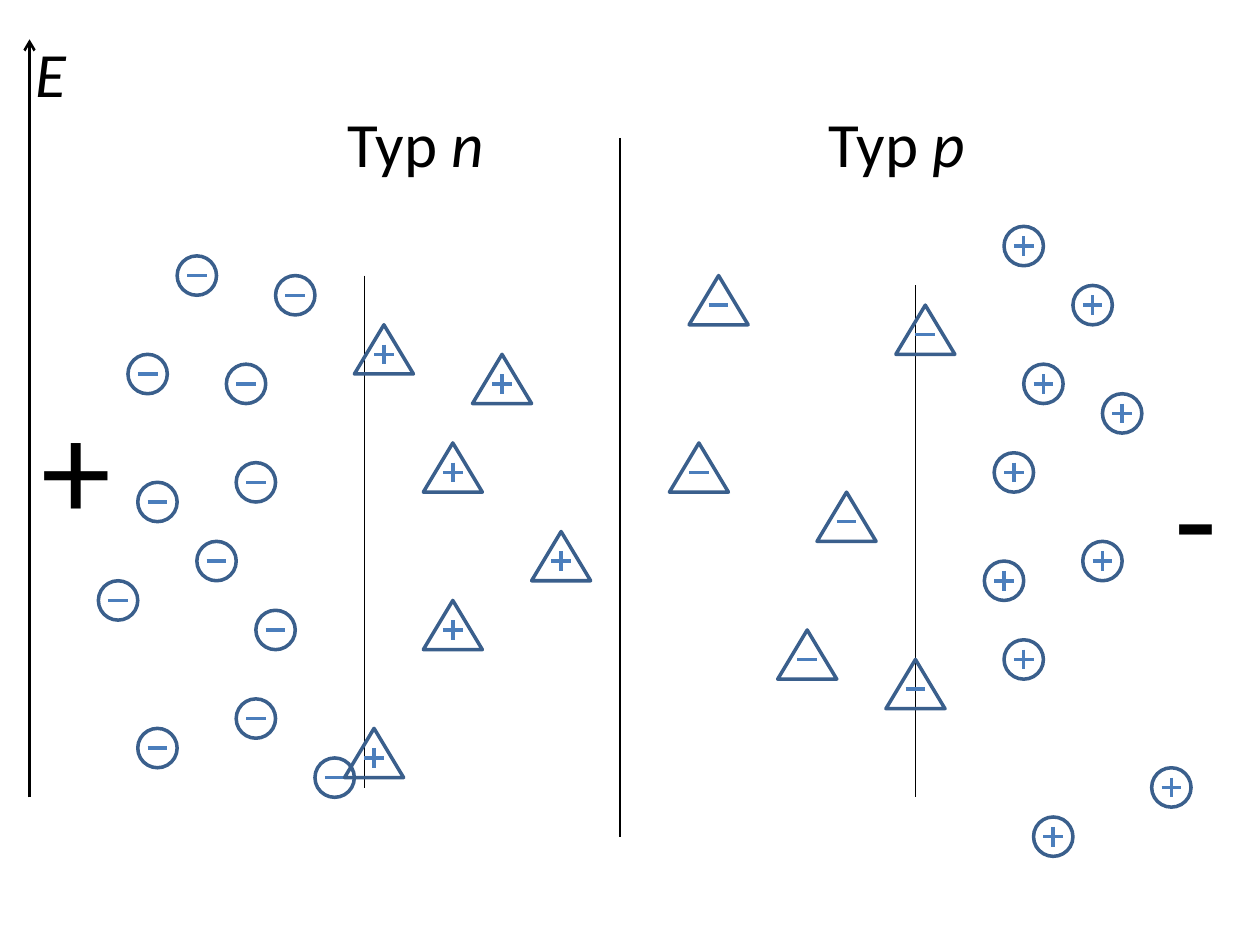
from dataclasses import dataclass

from lxml.etree import SubElement
from pptx import Presentation
from pptx.dml.color import RGBColor
from pptx.enum.shapes import MSO_CONNECTOR, MSO_SHAPE
from pptx.enum.text import MSO_AUTO_SIZE
from pptx.oxml.ns import qn
from pptx.util import Cm, Pt


@dataclass(frozen=True)
class Theme:
    font: str = "Calibri"
    black: RGBColor = RGBColor(0x00, 0x00, 0x00)
    outline: RGBColor = RGBColor(0x3A, 0x5F, 0x8C)
    sign: RGBColor = RGBColor(0x4B, 0x7E, 0xBC)
    label: int = 36
    pole: int = 80


T = Theme()
WIDTH, HEIGHT = 25.4, 19.05
UNIT = WIDTH / 128  # the drawing sits on a grid 128 units wide

prs = Presentation()
prs.slide_width, prs.slide_height = Cm(WIDTH), Cm(HEIGHT)
s = prs.slides.add_slide(prs.slide_layouts[6])


def grid(*units):
    """Turn grid units into lengths."""
    return [Cm(u * UNIT) for u in units]


def add_line(shapes, ends, color, width):
    """Draw a shadowless line; ends are x1, y1, x2, y2 in grid units."""
    cxn = shapes.add_connector(MSO_CONNECTOR.STRAIGHT, *grid(*ends))
    cxn.line.color.rgb = color
    cxn.line.width = Pt(width)
    SubElement(cxn._element.spPr, qn("a:effectLst"))
    return cxn


# Energy axis, junction and the edges of the depletion zone
axis = add_line(s.shapes, (3, 81, 3, 4), T.black, 1.5)
SubElement(axis.line._get_or_add_ln(), qn("a:tailEnd"), type="arrow")
for x, top, bottom in [(63, 14, 85), (37, 28, 80), (93, 29, 81)]:
    add_line(s.shapes, (x, top, x, bottom), T.black, 0.75)

# Labels: left, top, width, height in cm, size, runs as (text, italic)
labels = [
    (0.46, 0.58, 1.14, 1.8, T.label, [("E", True)]),
    (6.76, 1.98, 3.25, 1.8, T.label, [("Typ", False), (" n", True)]),
    (16.46, 1.98, 3.28, 1.8, T.label, [("Typ", False), (" p", True)]),
    (0.58, 7.54, 1.93, 3.68, T.pole, [("+", False)]),
    (23.42, 8.53, 1.4, 3.68, T.pole, [("-", False)]),
]
for left, top, width, height, size, runs in labels:
    tf = s.shapes.add_textbox(Cm(left), Cm(top), Cm(width), Cm(height)).text_frame
    tf.word_wrap = False
    tf.auto_size = MSO_AUTO_SIZE.SHAPE_TO_FIT_TEXT
    p = tf.paragraphs[0]
    for text, italic in runs:
        r = p.add_run()
        r.text = text
        r.font.name, r.font.size = T.font, Pt(size)
        r.font.italic = italic
        r.font.color.rgb = T.black

# Charges: centres of the signs in grid units
electrons = [(25, 39), (20, 28), (16, 51), (15, 38), (28, 64), (16, 76),
             (26, 49), (30, 30), (34, 79), (12, 61), (22, 57), (26, 73)]
holes = [(106, 39), (104, 25), (111, 31), (103, 48), (112, 57),
         (114, 42), (104, 67), (119, 80), (102, 59), (107, 85)]
donors = [(51, 39), (46, 48), (57, 57), (46, 64), (38, 77), (39, 36)]
acceptors = [(86, 53), (73, 31), (82, 67), (71, 48), (94, 34), (93, 70)]

# Outline, its size, distance from its top left corner to the sign
circle = (MSO_SHAPE.OVAL, 4, 4, 2)
triangle = (MSO_SHAPE.ISOSCELES_TRIANGLE, 6, 5, 3)

for centres, (kind, width, height, inset), positive in [
    (electrons, circle, False),
    (holes, circle, True),
    (donors, triangle, True),
    (acceptors, triangle, False),
]:
    for x, y in centres:
        group = s.shapes.add_group_shape()
        sp = group.shapes.add_shape(kind, *grid(x - inset, y - inset, width, height))
        sp.shadow.inherit = False
        sp.fill.background()
        sp.line.color.rgb = T.outline
        sp.line.width = Pt(2)
        add_line(group.shapes, (x - 1, y, x + 1, y), T.sign, 2)
        if positive:
            add_line(group.shapes, (x, y - 1, x, y + 1), T.sign, 2)

prs.save("out.pptx")
